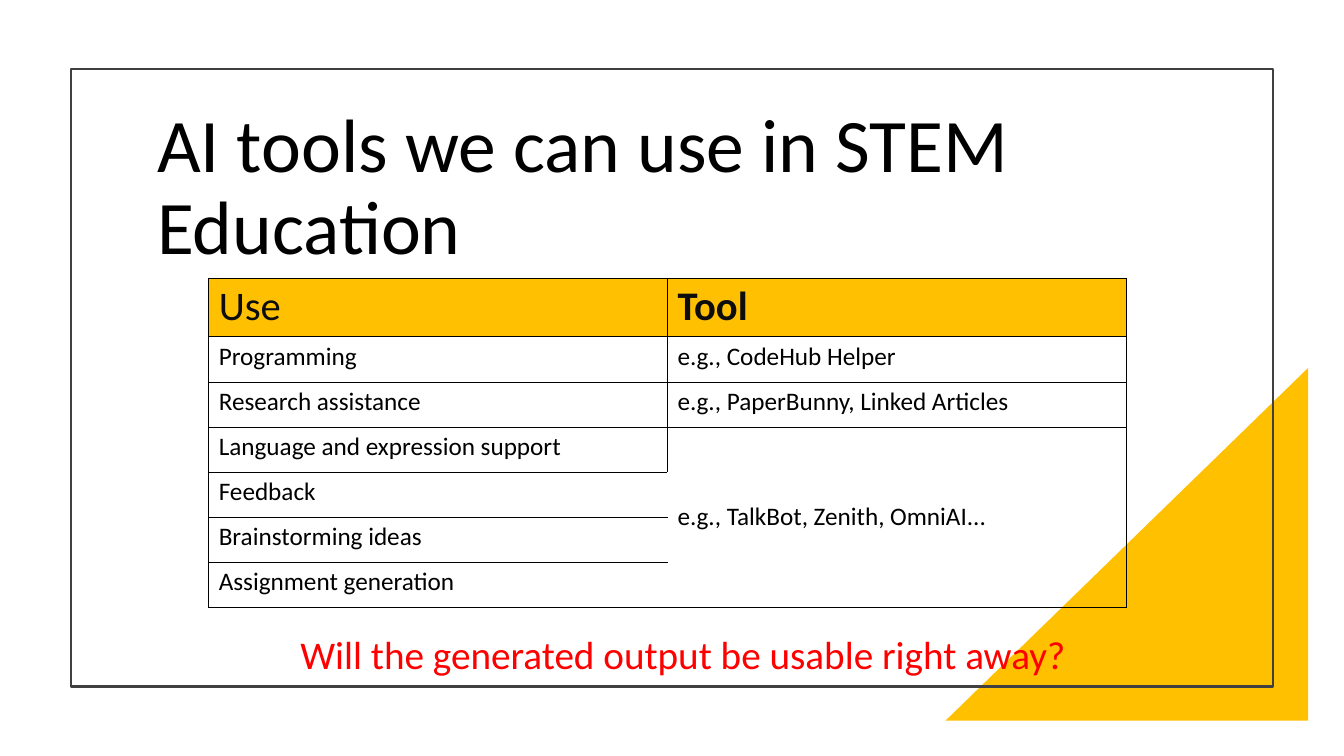
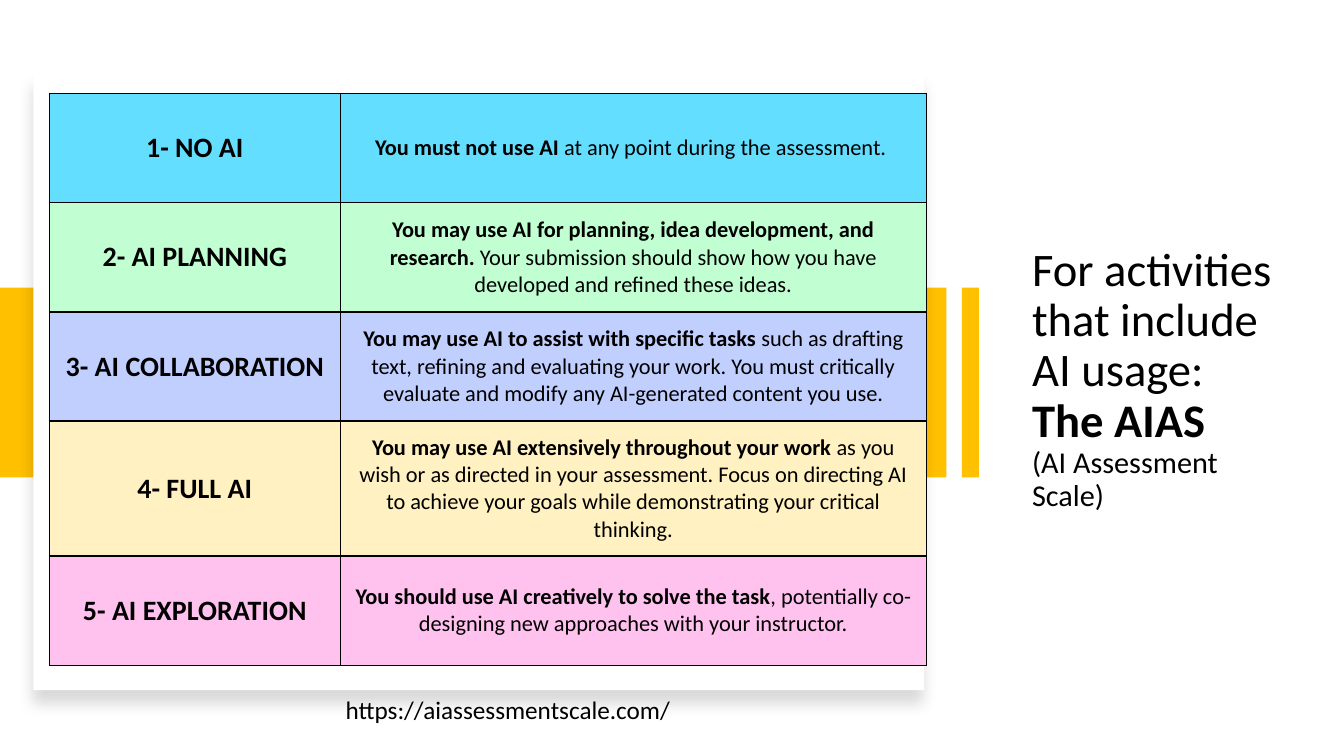
import dataclasses

import lxml.etree
import pptx
import pptx.dml.color
import pptx.enum.shapes
import pptx.enum.text
import pptx.oxml.ns
import pptx.util

Cm = pptx.util.Cm
Pt = pptx.util.Pt
SHAPES = pptx.enum.shapes.MSO_SHAPE
MIDDLE = pptx.enum.text.MSO_ANCHOR.MIDDLE
CENTER = pptx.enum.text.PP_ALIGN.CENTER

FONT = "Calibri"
COLORS = {
    "accent": "FFC000",
    "header": "FFC001",
    "header text": "0D0D0D",
    "text": "000000",
    "question": "FF0000",
    "frame": "404040",
    "white": "FFFFFF",
    "no ai": "64DEFF",
    "planning": "C1FFD2",
    "collaboration": "C1CFFF",
    "full ai": "FFF1C1",
    "exploration": "FFC1EE",
}

USES = [
    ("Programming", "e.g., CodeHub Helper"),
    ("Research assistance", "e.g., PaperBunny, Linked Articles"),
    ("Language and expression support", "e.g., TalkBot, Zenith, OmniAI..."),
    ("Feedback", ""),
    ("Brainstorming ideas", ""),
    ("Assignment generation", ""),
]
FIRST_SHARED_ROW = 3

# Colour, level, bold rule, remaining rule
LEVELS = [
    ("no ai", "1- NO AI", "You must not use AI ", "at any point during the assessment. "),
    ("planning", "2- AI PLANNING",
     "You may use AI for planning, idea development, and research.",
     " Your submission should show how you have developed and refined these ideas."),
    ("collaboration", "3- AI COLLABORATION",
     "You may use AI to assist with specific tasks",
     " such as drafting text, refining and evaluating your work. You must critically "
     "evaluate and modify any AI-generated content you use."),
    ("full ai", "4- FULL AI",
     "You may use AI extensively throughout your work",
     " as you wish or as directed in your assessment. Focus on directing AI to achieve "
     "your goals while demonstrating your critical thinking."),
    ("exploration", "5- AI EXPLORATION",
     "You should use AI creatively to solve the task",
     ", potentially co-designing new approaches with your instructor."),
]


@dataclasses.dataclass
class Run:
    text: str
    size: float
    bold: bool = False
    color: str = "text"
    line_break: bool = False


def rgb(name):
    return pptx.dml.color.RGBColor.from_string(COLORS[name])


def add_element(parent, tag, **attributes):
    return lxml.etree.SubElement(parent, pptx.oxml.ns.qn(tag), **attributes)


def write_runs(text_frame, runs, line_spacing=None, alignment=None):
    paragraph = text_frame.paragraphs[0]
    paragraph.line_spacing = line_spacing
    paragraph.alignment = alignment
    for item in runs:
        run = paragraph.add_run()
        run.text = item.text
        run.font.name = FONT
        run.font.size = Pt(item.size)
        run.font.bold = item.bold
        run.font.color.rgb = rgb(item.color)
        if item.line_break:
            paragraph.add_line_break()


def add_text(slide, box, runs, line_spacing=None, anchor=None):
    shape = slide.shapes.add_textbox(*map(Cm, box))
    shape.text_frame.word_wrap = True
    shape.text_frame.vertical_anchor = anchor
    write_runs(shape.text_frame, runs, line_spacing)
    return shape


def add_title(slide, box, runs):
    add_text(slide, box, runs, line_spacing=0.9, anchor=MIDDLE)


def add_block(slide, box, fill=None, line=None, kind=SHAPES.RECTANGLE):
    shape = slide.shapes.add_shape(kind, *map(Cm, box))
    shape.shadow.inherit = False
    if fill:
        shape.fill.solid()
        shape.fill.fore_color.rgb = rgb(fill)
    else:
        shape.fill.background()
    if line:
        shape.line.color.rgb = rgb(line)
        shape.line.width = Pt(1.5)
    else:
        shape.line.fill.background()
    return shape


def flip_horizontally(shape):
    shape._element.spPr.find(pptx.oxml.ns.qn("a:xfrm")).set("flipH", "1")


def add_soft_shadow(shape):
    effects = shape._element.spPr.find(pptx.oxml.ns.qn("a:effectLst"))
    shadow = add_element(effects, "a:outerShdw", blurRad=str(Pt(11)), dist=str(Pt(10)),
                         dir="5400000", algn="t", rotWithShape="0")
    color = add_element(shadow, "a:srgbClr", val=COLORS["text"])
    add_element(color, "a:alpha", val="15000")


def add_table(slide, left, top, widths, heights):
    frame = slide.shapes.add_table(len(heights), len(widths), Cm(left), Cm(top),
                                   Cm(sum(widths)), Cm(sum(heights)))
    table = frame.table
    for column, width in zip(table.columns, widths):
        column.width = Cm(width)
    for row, height in zip(table.rows, heights):
        row.height = Cm(height)
    return table


def format_cell(cell, fill, border_width, white_sides=""):
    """Fill the cell and draw its borders: black, or white on the sides named (L, R, T, B)."""
    if fill:
        cell.fill.solid()
        cell.fill.fore_color.rgb = rgb(fill)
    else:
        cell.fill.background()
    properties = cell._tc.get_or_add_tcPr()
    for position, side in enumerate("LRTB"):
        white = side in white_sides
        line = add_element(properties, "a:ln" + side, w=str(Pt(1 if white else border_width)))
        color = add_element(line, "a:solidFill")
        add_element(color, "a:srgbClr", val=COLORS["white" if white else "text"])
        properties.insert(position, line)


def add_uses_table(slide):
    table = add_table(slide, 5.26, 7.01, [11.56] * 2, [1.48] + [1.135] * len(USES))
    for column, heading in enumerate(("Use", "Tool")):
        cell = table.cell(0, column)
        format_cell(cell, "header", 0.75)
        write_runs(cell.text_frame, [Run(heading, 29, column == 1, "header text")], Pt(34.5))
    for row, texts in enumerate(USES, start=1):
        for column, text in enumerate(texts):
            cell = table.cell(row, column)
            white_sides = "RL"[column] if row > FIRST_SHARED_ROW else ""
            format_cell(cell, None, 0.75, white_sides)
            if text:
                write_runs(cell.text_frame, [Run(text, 18)], Pt(21.8))
    shared = table.cell(FIRST_SHARED_ROW, 1)
    shared.merge(table.cell(len(USES), 1))
    shared.vertical_anchor = MIDDLE


def add_levels_table(slide):
    table = add_table(slide, 1.24, 2.36, [7.34, 14.76], [2.75, 2.75, 2.75, 3.4, 2.75])
    for row, (color, level, rule, detail) in enumerate(LEVELS):
        contents = ([Run(level, 20, True)], [Run(rule, 16, True), Run(detail, 16)])
        for column, runs in enumerate(contents):
            cell = table.cell(row, column)
            cell.vertical_anchor = MIDDLE
            format_cell(cell, color, 1)
            write_runs(cell.text_frame, runs, alignment=CENTER)


def build_tools_slide(slide):
    corner = add_block(slide, (23.83, 9.27, 9.14, 8.89), "accent", kind=SHAPES.RIGHT_TRIANGLE)
    flip_horizontally(corner)
    add_block(slide, (1.78, 1.73, 30.3, 15.57), line="frame")
    add_title(slide, (3.71, 2.51, 26.47, 4.5),
              [Run("AI tools we can use in STEM Education", 54)])
    add_text(slide, (7.32, 15.88, 21.06, 2.49),
             [Run("Will the generated output be usable right away?", 28, color="question")],
             line_spacing=0.9)
    add_uses_table(slide)


def build_scale_slide(slide):
    add_title(slide, (25.76, 5.61, 6.86, 7.9), [
        Run("For activities that include AI usage: ", 33.3, line_break=True),
        Run("The AIAS ", 33.3, True, line_break=True),
        Run("(AI Assessment Scale)", 21.6),
    ])
    add_block(slide, (0, 7.25, 23.85, 4.78), "accent")
    card = add_block(slide, (0.84, 1.85, 22.45, 15.54), "white")
    add_soft_shadow(card)
    add_block(slide, (24.24, 7.25, 0.43, 4.78), "accent")
    address = add_text(slide, (8.46, 17.37, 9.09, 1.02),
                       [Run("https://aiassessmentscale.com/", 18)])
    address.text_frame.auto_size = pptx.enum.text.MSO_AUTO_SIZE.SHAPE_TO_FIT_TEXT
    add_levels_table(slide)


def main():
    presentation = pptx.Presentation()
    presentation.slide_width = Cm(33.87)
    presentation.slide_height = Cm(19.05)
    blank_layout = presentation.slide_layouts[6]
    for build_slide in (build_tools_slide, build_scale_slide):
        build_slide(presentation.slides.add_slide(blank_layout))
    presentation.save("out.pptx")


if __name__ == "__main__":
    main()
